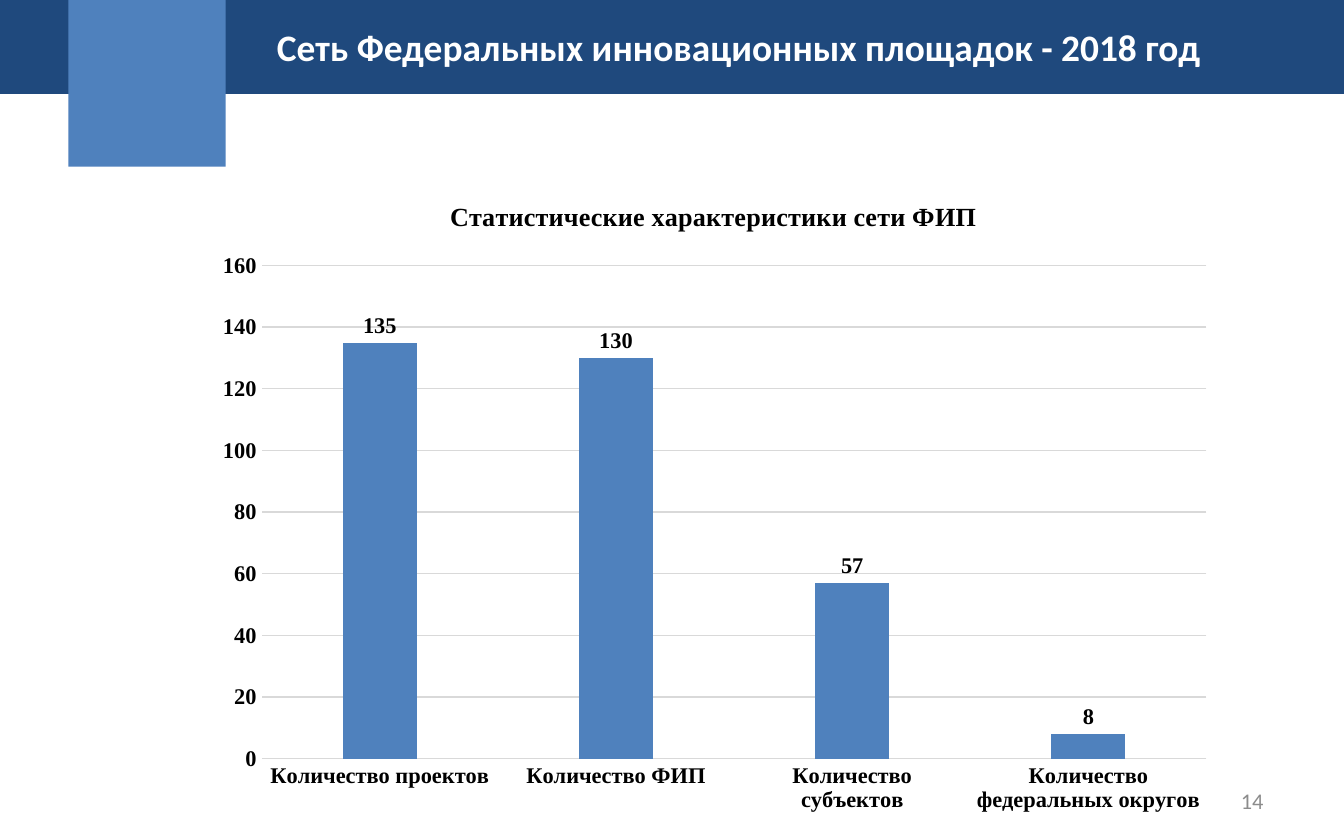
from dataclasses import dataclass

from lxml import etree
from pptx import Presentation
from pptx.chart.data import CategoryChartData
from pptx.dml.color import RGBColor
from pptx.enum.chart import XL_CHART_TYPE, XL_LABEL_POSITION, XL_TICK_MARK
from pptx.enum.shapes import MSO_SHAPE as Shape
from pptx.enum.text import MSO_ANCHOR as Anchor, PP_ALIGN as Align
from pptx.oxml.ns import qn
from pptx.util import Inches, Pt

NAVY = RGBColor(0x1F, 0x49, 0x7D)
BLUE = RGBColor(0x4F, 0x81, 0xBD)
WHITE = RGBColor(0xFF, 0xFF, 0xFF)
BLACK = RGBColor(0, 0, 0)
GRAY = RGBColor(0x8C, 0x8C, 0x8C)
GRID = RGBColor(0xD9, 0xD9, 0xD9)
SANS, SERIF = "Calibri", "Times New Roman"


@dataclass
class Area:
    left: float
    top: float
    width: float
    height: float

    def lengths(self) -> list:
        return [Inches(v) for v in (self.left, self.top, self.width, self.height)]


@dataclass
class Label:
    text: str
    area: Area
    size: int
    color: RGBColor
    align: Align
    anchor: Anchor
    bold: bool = False


BLOCKS = [(Area(0, 0, 10, 0.7), NAVY), (Area(0.51, 0, 1.17, 1.24), BLUE)]
LABELS = [
    Label("14", Area(7.17, 5.79, 2.33, 0.33), 12, GRAY, Align.RIGHT, Anchor.MIDDLE),
    Label("Сеть Федеральных инновационных площадок - 2018 год ",
          Area(1.93, 0.13, 7.2, 0.44), 20, WHITE, Align.CENTER, Anchor.TOP, True),
]
COUNTS = {
    "Количество проектов": 135,
    "Количество ФИП": 130,
    "Количество субъектов": 57,
    "Количество федеральных округов": 8,
}
CHART_AREA = Area(1.49, 1.3, 7.64, 4.83)
PLOT_SHARE = {"x": 0.06, "y": 0.14, "w": 0.92, "h": 0.76}


def style_font(font, name: str, size: int, color: RGBColor, bold: bool) -> None:
    font.name, font.size, font.bold = name, Pt(size), bold
    font.color.rgb = color


def style_line(line) -> None:
    line.color.rgb = GRID
    line.width = Pt(0.75)


def add_block(page, area: Area, color: RGBColor) -> None:
    block = page.shapes.add_shape(Shape.RECTANGLE, *area.lengths())
    block.shadow.inherit = False
    block.fill.solid()
    block.fill.fore_color.rgb = color
    block.line.fill.background()


def add_label(page, label: Label) -> None:
    frame = page.shapes.add_textbox(*label.area.lengths()).text_frame
    frame.word_wrap = True
    frame.vertical_anchor = label.anchor
    para = frame.paragraphs[0]
    para.text = label.text
    para.alignment = label.align
    style_font(para.font, SANS, label.size, label.color, label.bold)


def place_plot(chart) -> None:
    """Fix the inner plot area as shares of the chart."""
    area = chart.plots[0]._element.getparent()
    layout = area.find(qn("c:layout"))
    if layout is None:
        layout = etree.Element(qn("c:layout"))
        area.insert(0, layout)
    manual = etree.SubElement(layout, qn("c:manualLayout"))
    settings = {"layoutTarget": "inner", "xMode": "edge", "yMode": "edge", **PLOT_SHARE}
    for tag, value in settings.items():
        etree.SubElement(manual, qn(f"c:{tag}")).set("val", str(value))


def add_count_chart(page) -> None:
    data = CategoryChartData()
    data.categories = list(COUNTS)
    data.add_series("Series 1", list(COUNTS.values()))
    chart = page.shapes.add_chart(
        XL_CHART_TYPE.COLUMN_CLUSTERED, *CHART_AREA.lengths(), data).chart
    chart.has_legend = False
    style_font(chart.font, SERIF, 12, BLACK, True)

    # Chart title
    chart.has_title = True
    para = chart.chart_title.text_frame.paragraphs[0]
    para.text = "Статистические характеристики сети ФИП"
    style_font(para.font, SERIF, 14, BLACK, True)
    chart.chart_title.include_in_layout = False

    # Axes
    for axis in (chart.category_axis, chart.value_axis):
        axis.major_tick_mark = axis.minor_tick_mark = XL_TICK_MARK.NONE
        style_font(axis.tick_labels.font, SERIF, 12, BLACK, True)
    style_line(chart.category_axis.format.line)
    values = chart.value_axis
    values.minimum_scale, values.maximum_scale, values.major_unit = 0, 160, 20
    values.format.line.fill.background()
    style_line(values.major_gridlines.format.line)

    # Columns and their values
    plot = chart.plots[0]
    plot.gap_width, plot.overlap, plot.vary_by_categories = 219, -27, False
    fill = plot.series[0].format.fill
    fill.solid()
    fill.fore_color.rgb = BLUE
    labels = plot.series[0].data_labels
    labels.show_value = True
    labels.position = XL_LABEL_POSITION.OUTSIDE_END
    style_font(labels.font, SERIF, 12, BLACK, True)
    place_plot(chart)


def main() -> None:
    deck = Presentation()
    deck.slide_width, deck.slide_height = Inches(10), Inches(6.25)
    page = deck.slides.add_slide(deck.slide_layouts[6])
    for area, color in BLOCKS:
        add_block(page, area, color)
    for label in LABELS:
        add_label(page, label)
    add_count_chart(page)
    deck.save("out.pptx")


if __name__ == "__main__":
    main()
